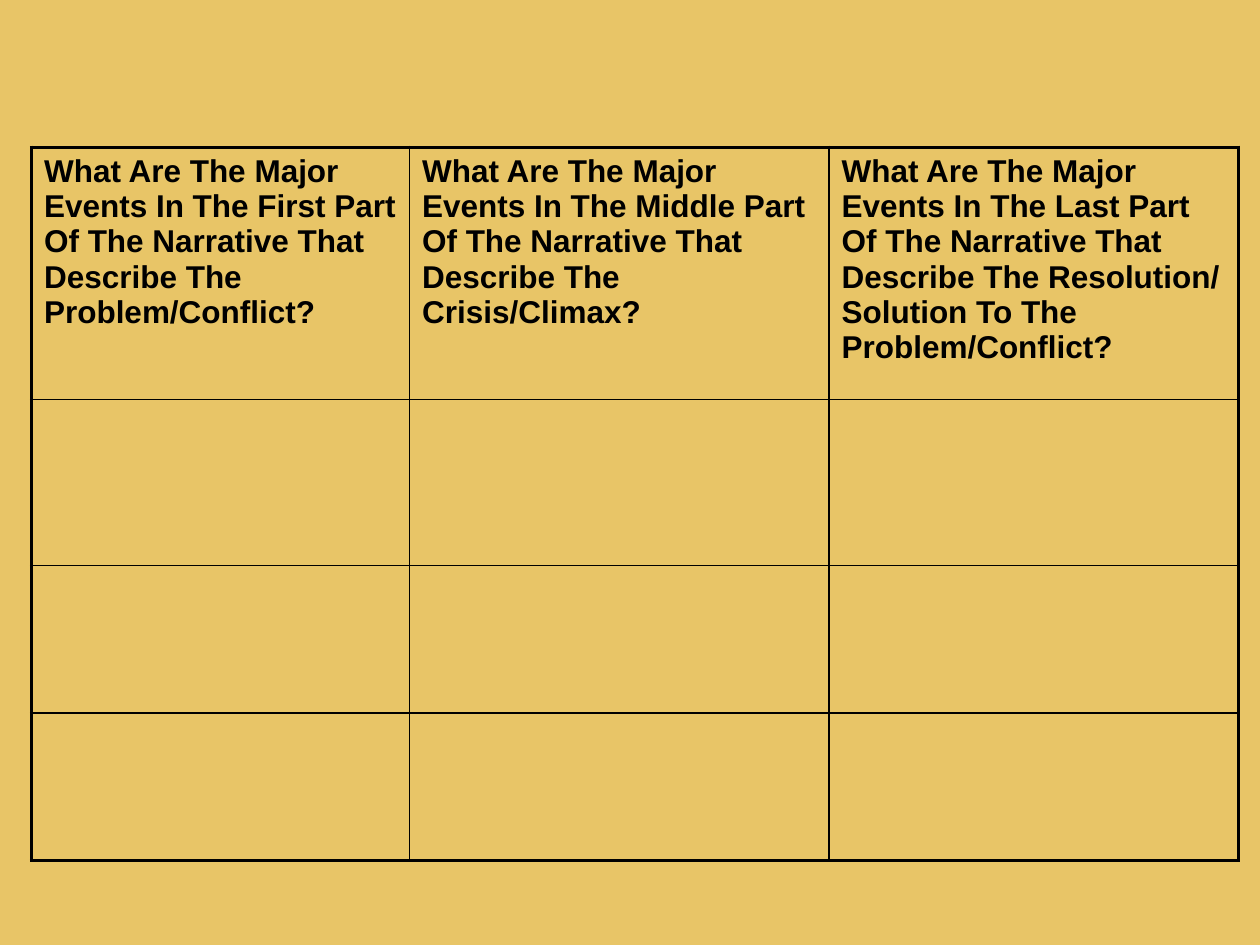
from lxml import etree
from pptx import Presentation
from pptx.dml.color import RGBColor
from pptx.oxml.ns import qn
from pptx.util import Inches, Pt

INK = "000000"
PAPER = "E8C567"
OUTER, INNER = 2.25, 1


def color(hex_value):
    return RGBColor.from_string(hex_value)


def add_border(cell, side, width):
    """Draw one side (L, R, T or B) of a cell; call before setting its fill."""
    line = etree.SubElement(cell._tc.get_or_add_tcPr(), qn(f"a:ln{side}"), w=str(Pt(width)))
    fill = etree.SubElement(line, qn("a:solidFill"))
    etree.SubElement(fill, qn("a:srgbClr"), val=INK)


questions = [
    "What Are The Major Events In The First Part Of The Narrative That "
    "Describe The Problem/Conflict?",
    "What Are The Major Events In The Middle Part Of The Narrative That "
    "Describe The Crisis/Climax?",
    "What Are The Major Events In The Last Part Of The Narrative That "
    "Describe The Resolution/ Solution To The Problem/Conflict?",
]
column_widths = [3, 3.33, 3.25]
row_heights = [2, 1.32, 1.17, 1.17]
last_row, last_column = len(row_heights) - 1, len(column_widths) - 1

prs = Presentation()
prs.slide_width, prs.slide_height = Inches(10), Inches(7.5)
slide = prs.slides.add_slide(prs.slide_layouts[6])
slide.background.fill.solid()
slide.background.fill.fore_color.rgb = color(PAPER)

organizer = slide.shapes.add_table(
    len(row_heights), len(column_widths), Inches(0.25), Inches(1.17),
    Inches(sum(column_widths)), Inches(sum(row_heights))).table
organizer.first_row = organizer.horz_banding = False
for column, width in zip(organizer.columns, column_widths):
    column.width = Inches(width)
for row, height in zip(organizer.rows, row_heights):
    row.height = Inches(height)

for r in range(len(row_heights)):
    for c in range(len(column_widths)):
        cell = organizer.cell(r, c)
        on_edge = {"L": c == 0, "R": c == last_column, "T": r == 0, "B": r == last_row}
        for side, is_outer in on_edge.items():
            add_border(cell, side, OUTER if is_outer else INNER)
        cell.fill.background()

for c, question in enumerate(questions):
    run = organizer.cell(0, c).text_frame.paragraphs[0].add_run()
    run.text = question
    run.font.name = "Arial"
    run.font.size = Pt(18)
    run.font.bold = True
    run.font.color.rgb = color(INK)

prs.save("out.pptx")
